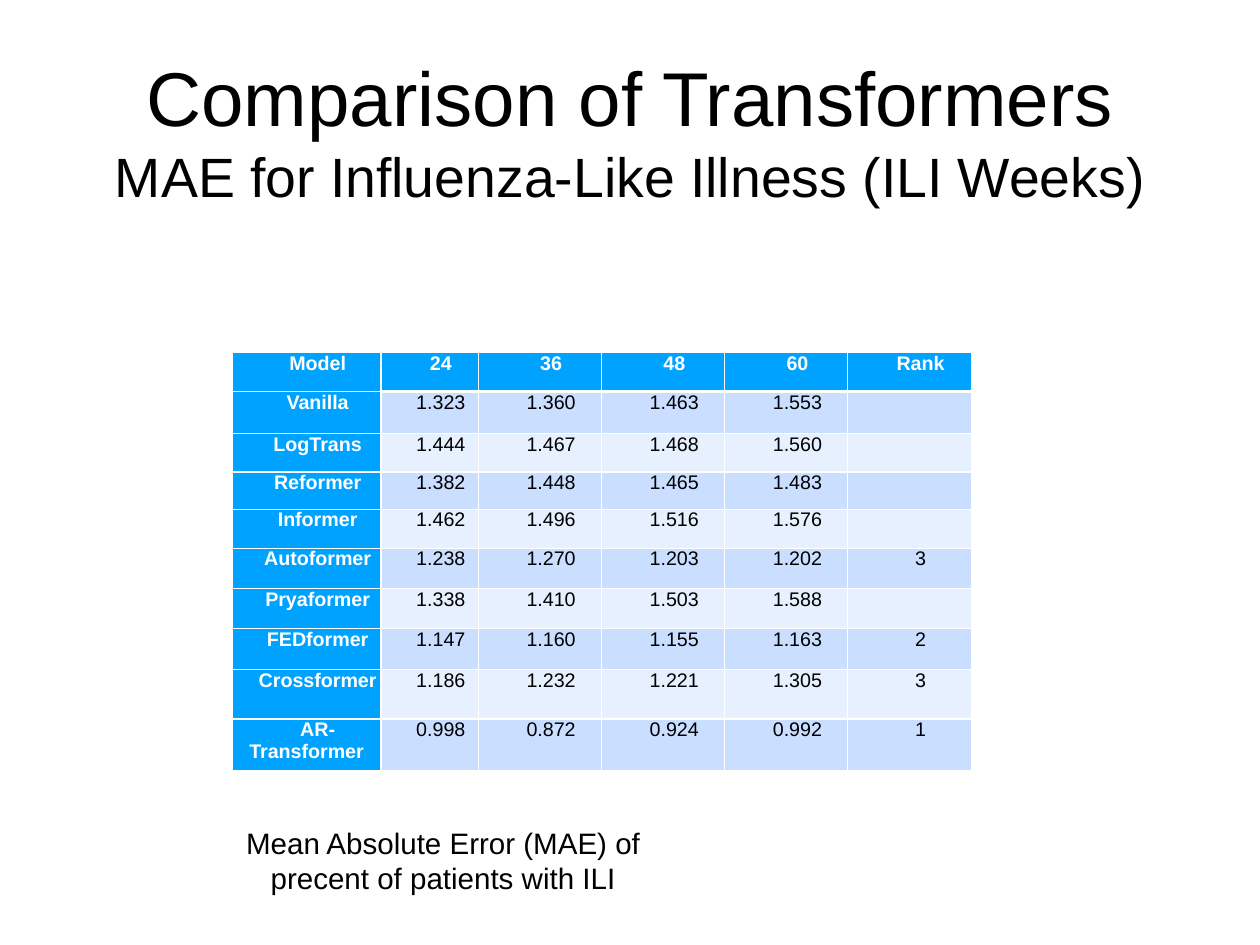
from dataclasses import dataclass

from lxml.etree import SubElement as Sub
from pptx import Presentation
from pptx.dml.color import RGBColor as Color
from pptx.enum.text import MSO_ANCHOR as Anchor, PP_ALIGN as Align
from pptx.oxml.ns import qn
from pptx.util import Pt

SCALE = 9144


@dataclass(frozen=True)
class Theme:
    font: str = "Arial"
    ink: str = "000000"
    white: str = "FFFFFF"
    head: str = "00A2FF"
    odd: str = "CADFFF"
    even: str = "E6F0FF"
    title: int = 62
    sub: int = 45
    note: int = 24
    cell: int = 16
    thin: int = 1
    thick: int = 3
    inset: int = 6
    indent: int = 25


class Deck:
    def __init__(self, theme, width, height):
        self.theme = theme
        self.show = Presentation()
        self.show.slide_width = width * SCALE
        self.show.slide_height = height * SCALE
        self.slide = self.show.slides.add_slide(self.show.slide_layouts[6])

    def style(self, para, size, color, bold=False):
        para.alignment = Align.CENTER
        for run in para.runs:
            font = run.font
            font.name = self.theme.font
            font.size = Pt(size)
            font.bold = bold
            font.color.rgb = Color.from_string(color)

    def pad(self, item, gap):
        item.margin_left = item.margin_right = gap * SCALE
        item.margin_top = item.margin_bottom = gap * SCALE

    def text(self, box, lines, sizes):
        frame = self.slide.shapes.add_textbox(*(n * SCALE for n in box)).text_frame
        frame.word_wrap = True
        frame.vertical_anchor = Anchor.MIDDLE
        self.pad(frame, self.theme.inset)
        frame.text = "\n".join(lines)
        for para, size in zip(frame.paragraphs, sizes):
            self.style(para, size, self.theme.ink)

    def border(self, cell, top, bottom):
        props = cell._tc.get_or_add_tcPr()
        thin = self.theme.thin
        for side, width in zip("LRTB", (thin, thin, top, bottom)):
            line = Sub(props, qn(f"a:ln{side}"), w=str(Pt(width)))
            Sub(Sub(line, qn("a:solidFill")), qn("a:srgbClr"), val=self.theme.white)

    def cell(self, cell, text, row, col):
        theme = self.theme
        title = row == 0 or col == 0
        top = theme.thick if row == 1 and col else theme.thin
        bottom = theme.thick if row == 0 and col else theme.thin
        self.border(cell, top, bottom)
        self.pad(cell, 0)
        cell.fill.solid()
        band = theme.odd if row % 2 else theme.even
        cell.fill.fore_color.rgb = Color.from_string(theme.head if title else band)
        cell.text = text
        para = cell.text_frame.paragraphs[0]
        self.style(para, theme.cell, theme.white if title else theme.ink, title)
        props = para._p.get_or_add_pPr()
        props.set("marL", "0")
        props.set("indent", str(theme.indent * SCALE))

    def table(self, left, top, widths, heights, data):
        box = (left, top, sum(widths), sum(heights))
        grid = self.slide.shapes.add_table(
            len(heights), len(widths), *(n * SCALE for n in box)).table
        for col, width in zip(grid.columns, widths):
            col.width = width * SCALE
        for row, height in zip(grid.rows, heights):
            row.height = height * SCALE
        for r, line in enumerate(data):
            for c, text in enumerate(line):
                self.cell(grid.cell(r, c), text, r, c)


def main():
    theme = Theme()
    deck = Deck(theme, 1422, 1067)
    deck.text(
        (104, 28, 1214, 236),
        ["Comparison of Transformers", "MAE for Influenza-Like Illness (ILI Weeks)"],
        [theme.title, theme.sub])
    scores = [
        ("Model", "24", "36", "48", "60", "Rank"),
        ("Vanilla", "1.323", "1.360", "1.463", "1.553", ""),
        ("LogTrans", "1.444", "1.467", "1.468", "1.560", ""),
        ("Reformer", "1.382", "1.448", "1.465", "1.483", ""),
        ("Informer", "1.462", "1.496", "1.516", "1.576", ""),
        ("Autoformer", "1.238", "1.270", "1.203", "1.202", "3"),
        ("Pryaformer", "1.338", "1.410", "1.503", "1.588", ""),
        ("FEDformer", "1.147", "1.160", "1.155", "1.163", "2"),
        ("Crossformer", "1.186", "1.232", "1.221", "1.305", "3"),
        ("AR-Transformer", "0.998", "0.872", "0.924", "0.992", "1"),
    ]
    heights = [44, 48, 43, 42, 44, 46, 45, 46, 56, 58]
    deck.table(262, 398, [168, 110] + [139] * 4, heights, scores)
    deck.text(
        (258, 925, 484, 92),
        ["Mean Absolute Error (MAE) of precent of patients with ILI"],
        [theme.note])
    deck.show.save("out.pptx")


if __name__ == "__main__":
    main()
